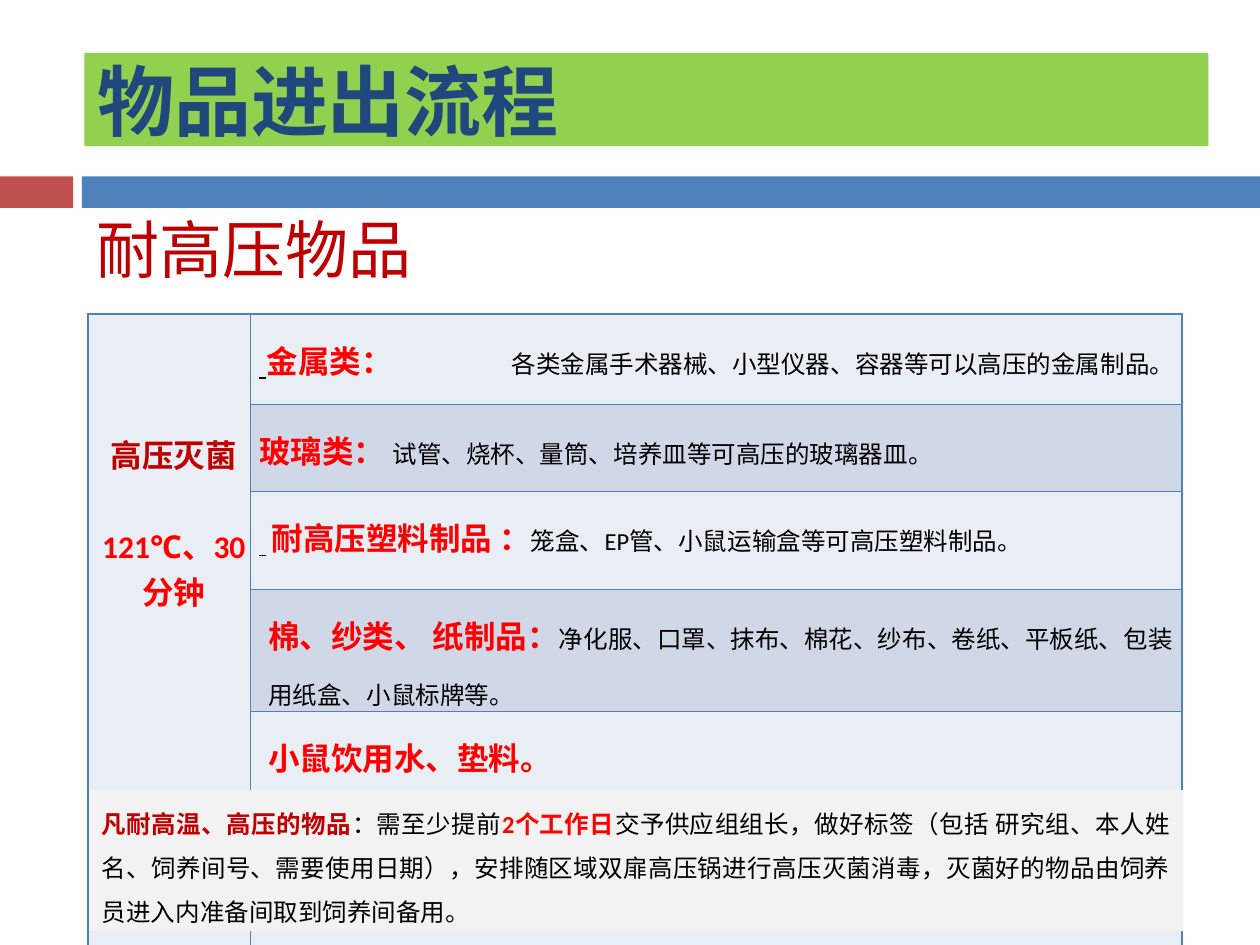
from lxml.etree import SubElement
from pptx import Presentation
from pptx.dml.color import RGBColor
from pptx.enum.shapes import MSO_SHAPE
from pptx.enum.text import MSO_ANCHOR, MSO_AUTO_SIZE, PP_ALIGN
from pptx.oxml.ns import qn
from pptx.util import Inches, Pt

CJK, LATIN = "Noto Sans CJK SC", "Calibri"
GREEN = RGBColor(0x92, 0xD0, 0x50)
NAVY = RGBColor(0x1F, 0x48, 0x7C)
BRICK = RGBColor(0xC0, 0x50, 0x4D)
BLUE = RGBColor(0x4F, 0x81, 0xBC)
DARK_RED = RGBColor(0xC0, 0x00, 0x00)
RED = RGBColor(0xFF, 0x00, 0x00)
BLACK = RGBColor(0x00, 0x00, 0x00)
NOTE_GREY = RGBColor(0xF2, 0xF2, 0xF2)
PALE = RGBColor(0xE9, 0xED, 0xF4)
PALE_BLUE = RGBColor(0xD0, 0xD8, 0xE8)
BORDER = "4F81BD"

ROW_HEIGHTS = [0.72, 0.69, 0.78, 0.95, 1.9]
CATEGORIES = [
    (" ", 0, "金属类：\t", "各类金属手术器械、小型仪器、容器等可以高压的金属制品。", 0.07),
    ("", 0, "玻璃类： ", "试管、烧杯、量筒、培养皿等可高压的玻璃器皿。", 0.07),
    (" ", 3, "耐高压塑料制品 ：", "笼盒、EP管、小鼠运输盒等可高压塑料制品。", 0.07),
    ("", 0, "棉、纱类、 纸制品：",
     "净化服、口罩、抹布、棉花、纱布、卷纸、平板纸、包装用纸盒、小鼠标牌等。", 0.14),
    ("", 0, "小鼠饮用水、垫料。", "", 0.14),
]


def add_run(paragraph, text, size, color, bold=False, face=LATIN):
    """Append a formatted run and return it."""
    run = paragraph.add_run()
    run.text = text
    font = run.font
    font.size, font.bold, font.name = Pt(size), bold, face
    font.color.rgb = color
    SubElement(font._element, qn("a:ea")).set("typeface", CJK)
    return run


def add_block(slide, left, top, width, height, color):
    """Draw a plain filled rectangle."""
    block = slide.shapes.add_shape(
        MSO_SHAPE.RECTANGLE, Inches(left), Inches(top), Inches(width), Inches(height))
    block.shadow.inherit = False
    block.fill.solid()
    block.fill.fore_color.rgb = color
    block.line.fill.background()
    return block


def add_bands(slide, top, height):
    """Draw the two-colour divider across the slide."""
    add_block(slide, 0, top, 0.58, height, BRICK)
    add_block(slide, 0.65, top, 9.35, height, BLUE)


def add_title(slide, left, top, width, height):
    """Place the title placeholder as a green bar."""
    title = slide.shapes.title
    title.left, title.top = Inches(left), Inches(top)
    title.width, title.height = Inches(width), Inches(height)
    title.fill.solid()
    title.fill.fore_color.rgb = GREEN
    frame = title.text_frame
    frame.auto_size = MSO_AUTO_SIZE.NONE
    frame.vertical_anchor = MSO_ANCHOR.MIDDLE
    frame.margin_left = Inches(0.1)
    frame.margin_right = frame.margin_top = frame.margin_bottom = 0
    heading = frame.paragraphs[0]
    heading.alignment = PP_ALIGN.LEFT
    add_run(heading, "物品进出流程", 44, NAVY, True, CJK)


def add_subtitle(slide, left, top, width, height):
    """Place the subtitle below the divider."""
    subtitle = slide.shapes.add_textbox(
        Inches(left), Inches(top), Inches(width), Inches(height))
    subtitle.text_frame.word_wrap = True
    add_run(subtitle.text_frame.paragraphs[0], "耐高压物品", 36, DARK_RED, face=CJK)


def style_cell(cell, color, margin):
    """Give a cell its borders, fill and margins."""
    properties = cell._tc.get_or_add_tcPr()
    for side in ("lnL", "lnR", "lnT", "lnB"):
        line = SubElement(properties, qn(f"a:{side}"), w=str(Pt(1)))
        SubElement(SubElement(line, qn("a:solidFill")), qn("a:srgbClr"), val=BORDER)
    cell.fill.solid()
    cell.fill.fore_color.rgb = color
    cell.margin_left = Inches(margin)
    cell.margin_right = cell.margin_top = cell.margin_bottom = 0


def fill_method(cell):
    """Write the sterilisation method in the merged cell."""
    cell.margin_top = Inches(0.93)
    method = cell.text_frame.paragraphs[0]
    add_run(method, "高压灭菌", 18, DARK_RED, True)
    setting = cell.text_frame.add_paragraph()
    setting.space_before = Pt(26)
    add_run(setting, "121℃、30 分钟", 18, RED, True)
    for paragraph in (method, setting):
        paragraph.alignment = PP_ALIGN.CENTER


def fill_category(cell, lead, lead_spacing, label, items):
    """Write one category label and its items."""
    category = cell.text_frame.paragraphs[0]
    category.line_spacing = 1.5
    if "\t" in label:
        tabs = SubElement(category._p.get_or_add_pPr(), qn("a:tabLst"))
        SubElement(tabs, qn("a:tab"), pos=str(Inches(2)), algn="l")
    if lead:
        mark = add_run(category, lead, 18, BLACK)
        mark.font.underline = True
        mark.font._element.set("spc", str(lead_spacing * 100))
    add_run(category, label, 18, RED, True)
    if items:
        add_run(category, items, 14, BLACK)


def add_items_table(slide, left, top, widths):
    """Build the table of autoclavable items."""
    table = slide.shapes.add_table(
        len(CATEGORIES), len(widths), Inches(left), Inches(top),
        Inches(sum(widths)), Inches(sum(ROW_HEIGHTS))).table
    table.first_row = table.horz_banding = False
    for column, width in zip(table.columns, widths):
        column.width = Inches(width)
    for index, (*content, margin) in enumerate(CATEGORIES):
        table.rows[index].height = Inches(ROW_HEIGHTS[index])
        style_cell(table.cell(index, 0), PALE, 0.07)
        category_cell = table.cell(index, 1)
        style_cell(category_cell, PALE_BLUE if index % 2 else PALE, margin)
        fill_category(category_cell, *content)
    method_cell = table.cell(0, 0)
    method_cell.merge(table.cell(len(CATEGORIES) - 1, 0))
    fill_method(method_cell)


def add_note(slide, left, top, width, height):
    """Place the grey note on handing items in."""
    note = add_block(slide, left, top, width, height, NOTE_GREY)
    note.text_frame.word_wrap = True
    rule = note.text_frame.paragraphs[0]
    rule.alignment = PP_ALIGN.JUSTIFY
    rule.line_spacing = 1.5
    add_run(rule, "凡耐高温、高压的物品", 14, DARK_RED, True)
    add_run(rule, "：需至少提前", 14, BLACK)
    add_run(rule, "2个工作日", 14, RED, True)
    add_run(rule, "交予供应组组长，做好标签（包括 研究组、本人姓名、饲养间号、需要使用日期），"
            "安排随区域双扉高压锅进行高压灭菌消毒，灭菌好的物品由饲养员进入内准备间取到饲养间备用。",
            14, BLACK)


def main():
    """Build and save the slide."""
    deck = Presentation()
    deck.slide_width, deck.slide_height = Inches(10), Inches(7.5)
    slide = deck.slides.add_slide(deck.slide_layouts[5])
    add_bands(slide, 1.4, 0.25)
    add_title(slide, 0.67, 0.42, 8.92, 0.74)
    add_items_table(slide, 0.7, 2.49, [1.29, 7.39])
    add_subtitle(slide, 0.67, 1.62, 2.91, 0.71)
    add_note(slide, 0.71, 6.27, 8.68, 1.12)
    deck.save("out.pptx")


if __name__ == "__main__":
    main()
